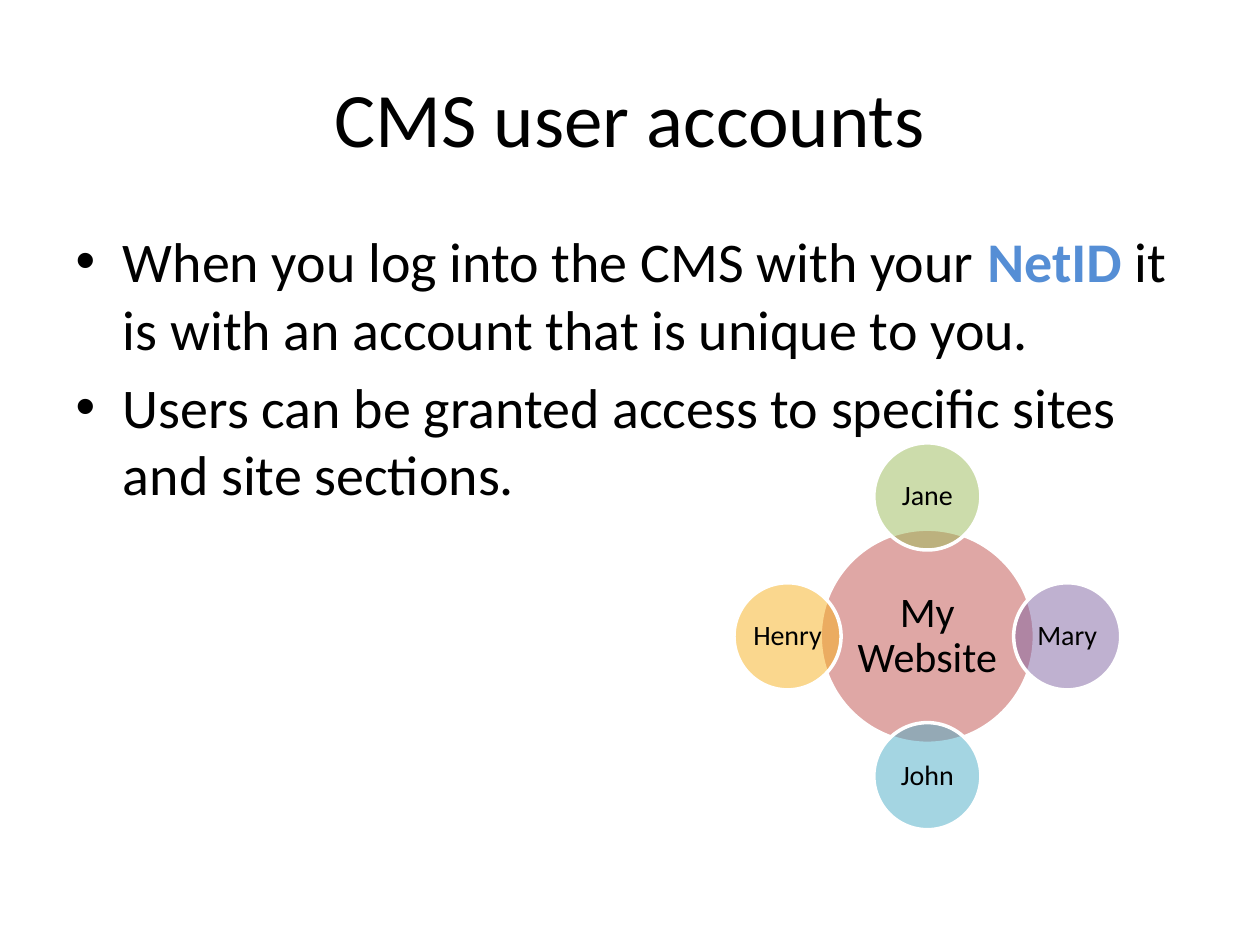
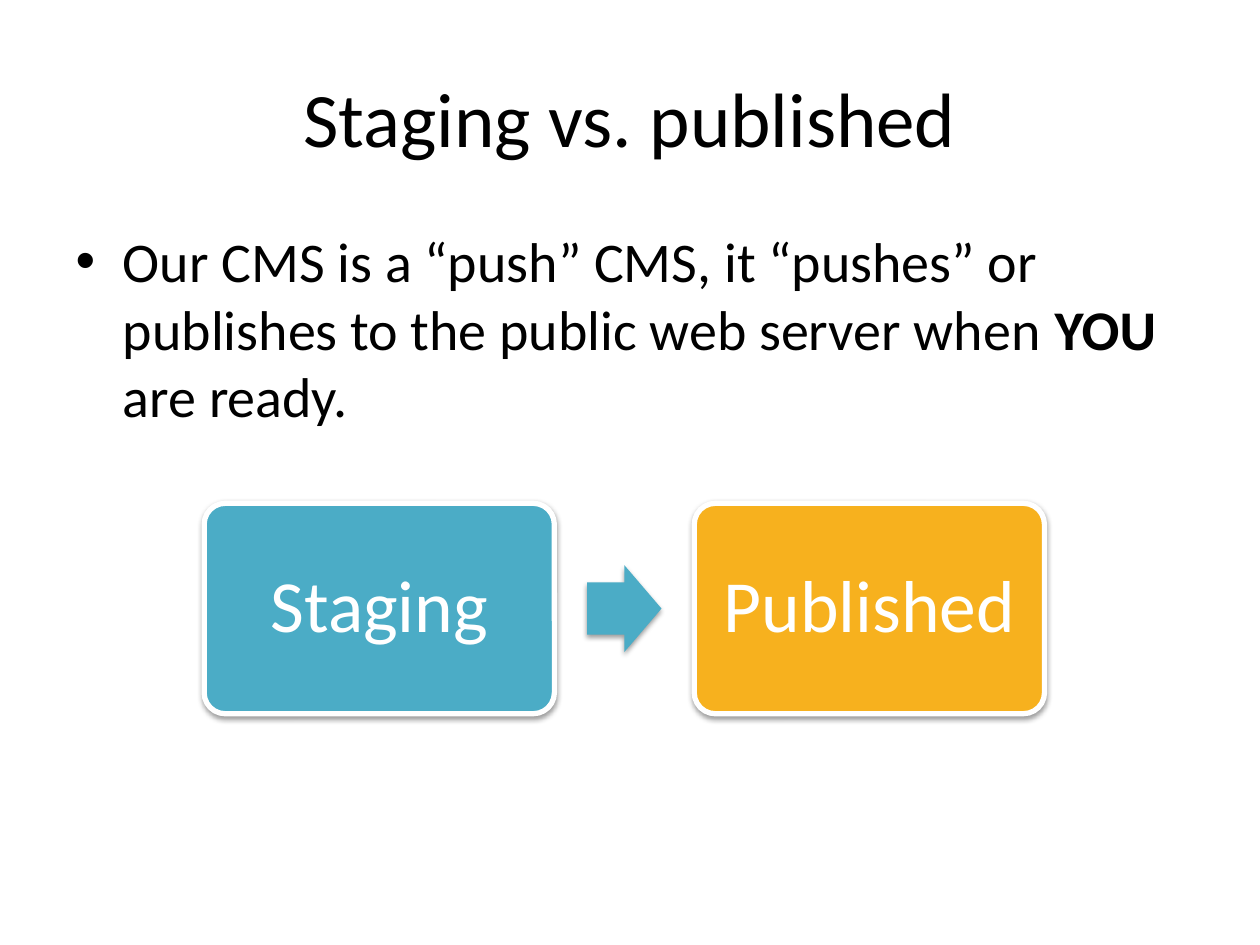
import dataclasses
import math

import lxml.etree
import pptx
import pptx.dml.color
import pptx.enum.shapes
import pptx.enum.text
import pptx.oxml.ns
import pptx.util

Inches, Pt = pptx.util.Inches, pptx.util.Pt
RGB = pptx.dml.color.RGBColor.from_string
Shape = pptx.enum.shapes.MSO_SHAPE
qn = pptx.oxml.ns.qn


@dataclasses.dataclass(frozen=True)
class Theme:
    font: str = "Calibri"
    black: str = "000000"
    white: str = "FFFFFF"
    blue: str = "558ED5"
    red: str = "C0504D"
    green: str = "9BBB59"
    purple: str = "8064A2"
    teal: str = "4BACC6"
    amber: str = "F7B11E"
    title: int = 44
    body: int = 32
    step: int = 42
    hub: int = 24
    user: int = 16


theme = Theme()


def style(para, size, color):
    para.font.name = theme.font
    para.font.size = Pt(size)
    para.font.color.rgb = RGB(color)


def draw(slide, kind, mid, size, fill, border=0, text="", pts=0, ink="", inset=0):
    """Add a filled shape centred on mid, with an optional outline and label."""
    left, top = mid[0] - size[0] / 2, mid[1] - size[1] / 2
    shape = slide.shapes.add_shape(
        kind, Inches(left), Inches(top), Inches(size[0]), Inches(size[1]))
    shape.shadow.inherit = False
    shape.fill.solid()
    shape.fill.fore_color.rgb = RGB(fill)
    if border:
        shape.line.color.rgb = RGB(theme.white)
        shape.line.width = Pt(border)
    else:
        shape.line.fill.background()
    if text:
        frame = shape.text_frame
        frame.word_wrap = True
        frame.vertical_anchor = pptx.enum.text.MSO_ANCHOR.MIDDLE
        frame.margin_left = frame.margin_right = Inches(inset)
        frame.margin_top = frame.margin_bottom = Inches(inset)
        para = frame.paragraphs[0]
        para.text = text
        para.alignment = pptx.enum.text.PP_ALIGN.CENTER
        para.line_spacing = 0.9
        style(para, pts, ink)
    return shape


deck = pptx.Presentation()
deck.slide_width, deck.slide_height = Inches(10), Inches(7.5)

# Each bullet is a list of runs: text, and the colour of a bold run
pages = [
    ("CMS user accounts", 4.95, [
        [("When you log into the CMS with your ", None),
         ("NetID", theme.blue),
         (" it is with an account that is unique to you.", None)],
        [("Users can be granted access to specific sites and site sections.", None)],
    ]),
    ("Staging vs. published", 2.03, [
        [("Our CMS is a “push” CMS, it “pushes” or publishes to the public "
          "web server when ", None),
         ("YOU", theme.black),
         (" are ready.", None)],
    ]),
]
slides = []
for name, height, items in pages:
    slide = deck.slides.add_slide(deck.slide_layouts[1])
    slides.append(slide)
    title, body = slide.placeholders
    title.left, title.top = Inches(0.5), Inches(0.3)
    title.width, title.height = Inches(9), Inches(1.25)
    title.text_frame.text = name
    style(title.text_frame.paragraphs[0], theme.title, theme.black)
    body.left, body.top = Inches(0.5), Inches(1.75)
    body.width, body.height = Inches(9), Inches(height)
    frame = body.text_frame
    for i, runs in enumerate(items):
        para = frame.add_paragraph() if i else frame.paragraphs[0]
        if i == 0:
            para.space_before = Pt(0)
        style(para, theme.body, theme.black)
        for text, accent in runs:
            run = para.add_run()
            run.text = text
            if accent:
                run.font.bold = True
                run.font.color.rgb = RGB(accent)
accounts, staging = slides

# Site in the middle, users around it clockwise from the top
hub, reach = (7.36, 5.05), 1.11
circles = [draw(accounts, Shape.OVAL, hub, (1.7, 1.7), theme.red, 2,
                "My Website", theme.hub, theme.black, 0.03)]
users = [("Jane", theme.green), ("Mary", theme.purple),
         ("John", theme.teal), ("Henry", theme.amber)]
for i, (user, color) in enumerate(users):
    angle = math.tau * i / len(users)
    mid = hub[0] + reach * math.sin(angle), hub[1] - reach * math.cos(angle)
    circles.append(draw(accounts, Shape.OVAL, mid, (0.85, 0.85), color, 2,
                        user, theme.user, theme.black, 0.02))
for circle in circles:
    tint = circle.fill._xPr.find(qn("a:solidFill"))[0]
    lxml.etree.SubElement(tint, qn("a:alpha"), val="50000")

# Two stages with an arrow halfway between them
first, last, level = 3.01, 6.9, 4.83
parts = []
for text, color, x in [("Staging", theme.teal, first), ("Published", theme.amber, last)]:
    box = draw(staging, Shape.ROUNDED_RECTANGLE, (x, level), (2.78, 1.67), color, 3,
               text, theme.step, theme.white, 0.17)
    box.adjustments[0] = 0.1
    parts.append(box)
arrow = draw(staging, Shape.RIGHT_ARROW, ((first + last) / 2, level), (0.59, 0.69),
             theme.teal)
arrow.adjustments[0], arrow.adjustments[1] = 0.6, 0.5
parts.append(arrow)
for part in parts:
    effects = part._element.spPr.find(qn("a:effectLst"))
    shade = lxml.etree.SubElement(
        effects, qn("a:outerShdw"), blurRad=str(Pt(3.1)), dist=str(Pt(1.6)),
        dir="5400000", rotWithShape="0")
    tone = lxml.etree.SubElement(shade, qn("a:srgbClr"), val=theme.black)
    lxml.etree.SubElement(tone, qn("a:alpha"), val="38000")

deck.save("out.pptx")
